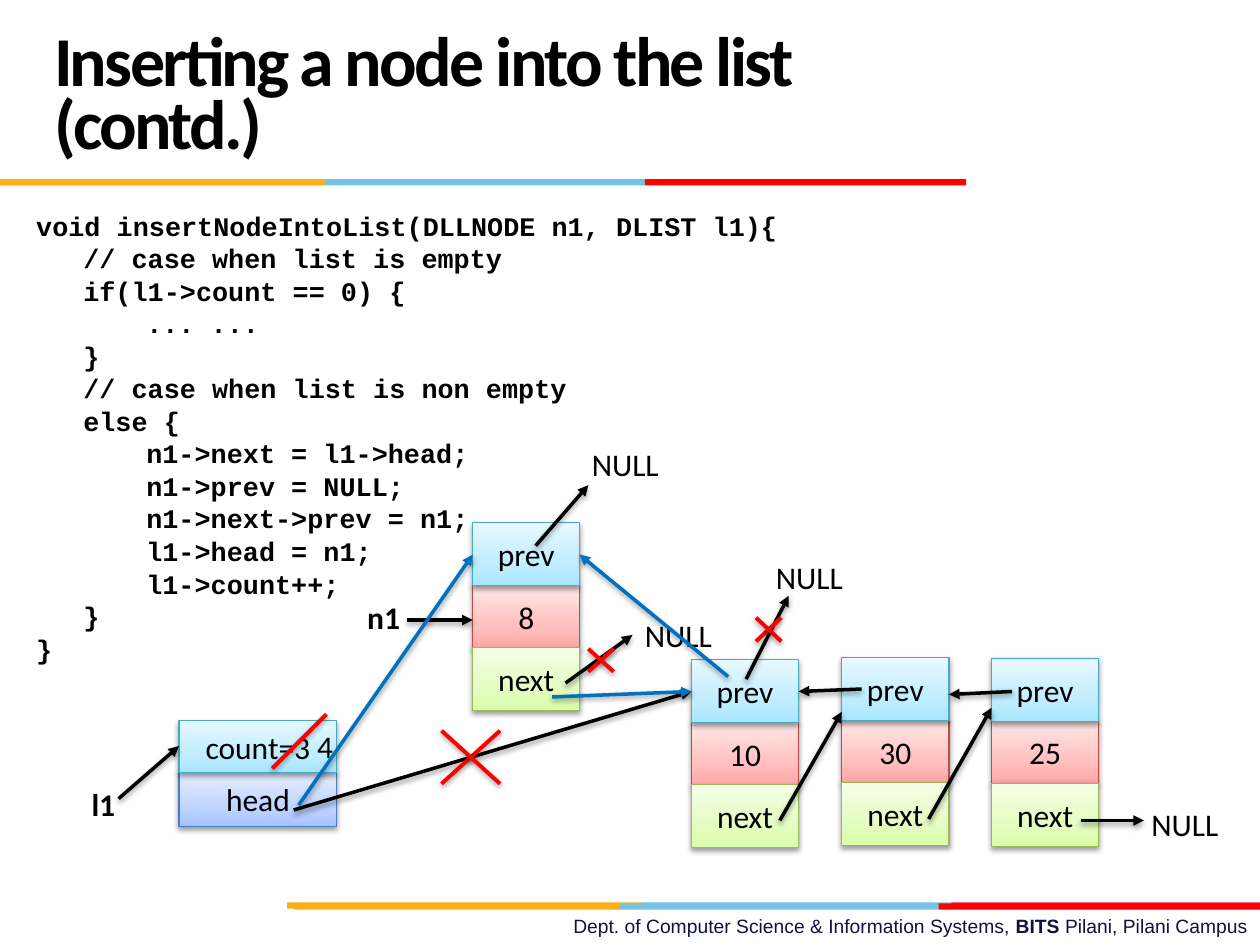
from copy import deepcopy

from pptx import Presentation
from pptx import util as u
from pptx.dml import color
from pptx.enum import shapes, text
from pptx.oxml import ns, parse_xml

BLACK, RED, BLUE = "000000", "FF0000", "0070C0"
GOLD, SKY, CRIMSON = "FCB017", "76C2E5", "E31C24"
LEFT, CENTER, RIGHT = text.PP_ALIGN.LEFT, text.PP_ALIGN.CENTER, text.PP_ALIGN.RIGHT
CYAN_BOX = ("A7E6FF", "C1EDFF", "E7F8FF", "46AAC5")
PINK_BOX = ("FFA6A5", "FFC0BF", "FFE7E7", "BF4C48")
GREEN_BOX = ("DAFDA7", "E4FCC2", "F5FFE7", "98B955")
BLUE_BOX = ("A4C4FF", "BFD4FF", "E6EEFF", "4B7EBC")
SHADOW = (
    f'<a:effectLst {ns.nsdecls("a")}>'
    '<a:outerShdw blurRad="40000" dist="20000" dir="5400000" rotWithShape="0">'
    '<a:srgbClr val="000000"><a:alpha val="38000"/></a:srgbClr>'
    "</a:outerShdw></a:effectLst>"
)
CODE = """void insertNodeIntoList(DLLNODE n1, DLIST l1){
\t// case when list is empty
\tif(l1->count == 0) {
\t\t... ...
\t}
\t// case when list is non empty
\telse {
\t\tn1->next = l1->head;
\t\tn1->prev = NULL;
\t\tn1->next->prev = n1;
\t\tl1->head = n1;
\t\tl1->count++;
\t}
}"""


def rgb(value):
    return color.RGBColor.from_string(value)


class Deck:
    """Holds the text style and the current slide, and draws each kind of element."""

    def __init__(self, s, font="Calibri", size=18):
        self.s, self.font, self.size = s, font, size

    def style(self, p, align=LEFT, bold=False, size=None, font=None, ink=BLACK):
        p.alignment = align
        p.font.name, p.font.size = font or self.font, u.Pt(size or self.size)
        p.font.bold = bold
        p.font.color.rgb = rgb(ink)

    def text_frame(self, x, y, w, h):
        tf = self.s.shapes.add_textbox(u.Cm(x), u.Cm(y), u.Cm(w), u.Cm(h)).text_frame
        tf.word_wrap = True
        return tf

    def label(self, words, x, y, w=1.96, align=LEFT, bold=False):
        p = self.text_frame(x, y, w, 1.02).paragraphs[0]
        p.text = words
        self.style(p, align, bold)

    def title(self, words, x, y, w, h):
        tf = self.text_frame(x, y, w, h)
        tf.vertical_anchor = text.MSO_ANCHOR.MIDDLE
        p = tf.paragraphs[0]
        r = p.add_run()
        r.text = words
        r.font._element.set("spc", "-150")
        p.line_spacing = u.Pt(36)
        self.style(p, bold=True, size=40)

    def code(self, source, x, y, w, h):
        tf = self.text_frame(x, y, w, h)
        for i, line in enumerate(source.split("\n")):
            p = tf.add_paragraph() if i else tf.paragraphs[0]
            p.text = line
            pPr = p._p.get_or_add_pPr()
            pPr.set("marL", str(u.Cm(0.95)))
            pPr.set("indent", str(u.Cm(-0.95)))
            p.line_spacing = 0.8
            if i:
                p.space_before = u.Pt(3.9)
            self.style(p, bold=True, size=15.3, font="Courier New")

    def footer(self, parts, x, y, w, h):
        p = self.text_frame(x, y, w, h).paragraphs[0]
        self.style(p, RIGHT, size=11, font="Arial", ink="101141")
        for words, bold in parts:
            r = p.add_run()
            r.text, r.font.bold = words, bold

    def rect(self, x, y, w, h):
        sp = self.s.shapes.add_shape(
            shapes.MSO_SHAPE.RECTANGLE, u.Cm(x), u.Cm(y), u.Cm(w), u.Cm(h))
        sp.shadow.inherit = False
        return sp

    def stripe(self, y, edges, fills):
        for x, end, fill in zip(edges, edges[1:], fills):
            sp = self.rect(x, y, end - x, 0.13)
            sp.fill.solid()
            sp.fill.fore_color.rgb = rgb(fill)
            sp.line.fill.background()

    def box(self, words, x, y, w, h, palette):
        sp = self.rect(x, y, w, h)
        sp.fill.gradient()
        sp.fill.gradient_angle = 90
        spPr = sp._element.spPr
        stops = spPr.find(".//" + ns.qn("a:gsLst"))
        stops.insert(1, deepcopy(stops[0]))
        for stop, place, shade in zip(sp.fill.gradient_stops, (0, 0.35, 1), palette):
            stop.position = place
            stop.color.rgb = rgb(shade)
        sp.line.color.rgb = rgb(palette[-1])
        sp.line.width = u.Pt(0.75)
        spPr.replace(spPr.find(ns.qn("a:effectLst")), parse_xml(SHADOW))
        sp.text_frame.vertical_anchor = text.MSO_ANCHOR.MIDDLE
        p = sp.text_frame.paragraphs[0]
        p.text = words
        self.style(p, CENTER)

    def node(self, value, x, y, w=2.16, h=1.27, step=1.26):
        cells = (value, 1, PINK_BOX), ("next", 2, GREEN_BOX), ("prev", 0, CYAN_BOX)
        for words, row, palette in cells:
            self.box(words, x, y + row * step, w, h, palette)

    def line(self, x1, y1, x2, y2, ink=RED, width=2.25):
        c = self.s.shapes.add_connector(
            shapes.MSO_CONNECTOR.STRAIGHT, u.Cm(x1), u.Cm(y1), u.Cm(x2), u.Cm(y2))
        c.line.color.rgb = rgb(ink)
        c.line.width = u.Pt(width)
        c._element.spPr.append(parse_xml(SHADOW))
        return c

    def arrow(self, x1, y1, x2, y2, ink=BLACK):
        ln = self.line(x1, y1, x2, y2, ink, 2).line._get_or_add_ln()
        ln.append(parse_xml(f'<a:tailEnd {ns.nsdecls("a")} type="triangle"/>'))

    def cross(self, left, top, right, bottom):
        self.line(right, top, left, bottom)
        self.line(right, bottom, left, top)


def main():
    prs = Presentation()
    prs.slide_width, prs.slide_height = u.Cm(25.4), u.Cm(19.05)
    d = Deck(prs.slides.add_slide(prs.slide_layouts[6]))

    d.stripe(18.19, (5.79, 12.95, 19.18, 25.4), (GOLD, SKY, CRIMSON))
    d.stripe(18.21, (5.92, 12.5, 18.92, 25.4), (GOLD, SKY, RED))
    d.stripe(3.61, (0, 6.55, 13, 19.48), (GOLD, SKY, RED))
    d.footer((("Dept. of Computer Science & Information Systems, ", False),
              ("BITS ", True), ("Pilani, Pilani Campus", False)), 0, 18.31, 25.4, 0.74)
    d.title("Inserting a node into the list (contd.)", 0.84, 0.43, 17.58, 3.18)
    d.code(CODE, 0.48, 4.22, 24.49, 9.65)

    d.box("head", 3.61, 15.57, 3.18, 1.09, BLUE_BOX)
    d.box("count=3", 3.61, 14.53, 3.18, 1.04, CYAN_BOX)
    for value, x, y in (("8", 9.53, 10.54), ("10", 13.94, 13.3),
                        ("30", 16.97, 13.26), ("25", 19.99, 13.27)):
        d.node(value, x, y)

    for x, y in (22.96, 16.1), (12.75, 12.29), (11.68, 8.84), (15.39, 11.13):
        d.label("NULL", x, y)
    d.label("4", 6.1, 14.53, 0.91, CENTER)
    d.label("l1", 0.41, 15.7, 3.35, CENTER, True)
    d.label("n1", 6.81, 11.94, 1.85, CENTER, True)

    for ends in (
        (21.79, 16.54, 23.06, 16.54), (18.72, 16.51, 19.99, 14.27),
        (15.72, 16.54, 16.97, 14.35), (5.92, 16.33, 13.94, 13.94),
        (11.4, 13.77, 12.75, 12.8), (2.39, 16.1, 3.61, 15.04),
        (8.2, 12.5, 9.53, 12.5), (10.8, 11, 11.86, 9.78),
        (15.04, 13.69, 15.9, 12.01), (17.37, 13.89, 16.1, 13.94),
        (20.4, 13.94, 19.13, 14),
    ):
        d.arrow(*ends)
    for ends in ((11.13, 14.05, 13.94, 13.94), (6.02, 16.23, 9.53, 11.18),
                 (14.68, 13.64, 11.68, 11.18)):
        d.arrow(*ends, BLUE)
    for corners in ((11.86, 13.08, 12.37, 13.54), (8.9, 14.73, 10.08, 15.8),
                    (15.24, 12.45, 15.75, 12.93)):
        d.cross(*corners)
    d.line(6.58, 14.4, 5.49, 15.49)

    prs.save("out.pptx")


if __name__ == "__main__":
    main()
